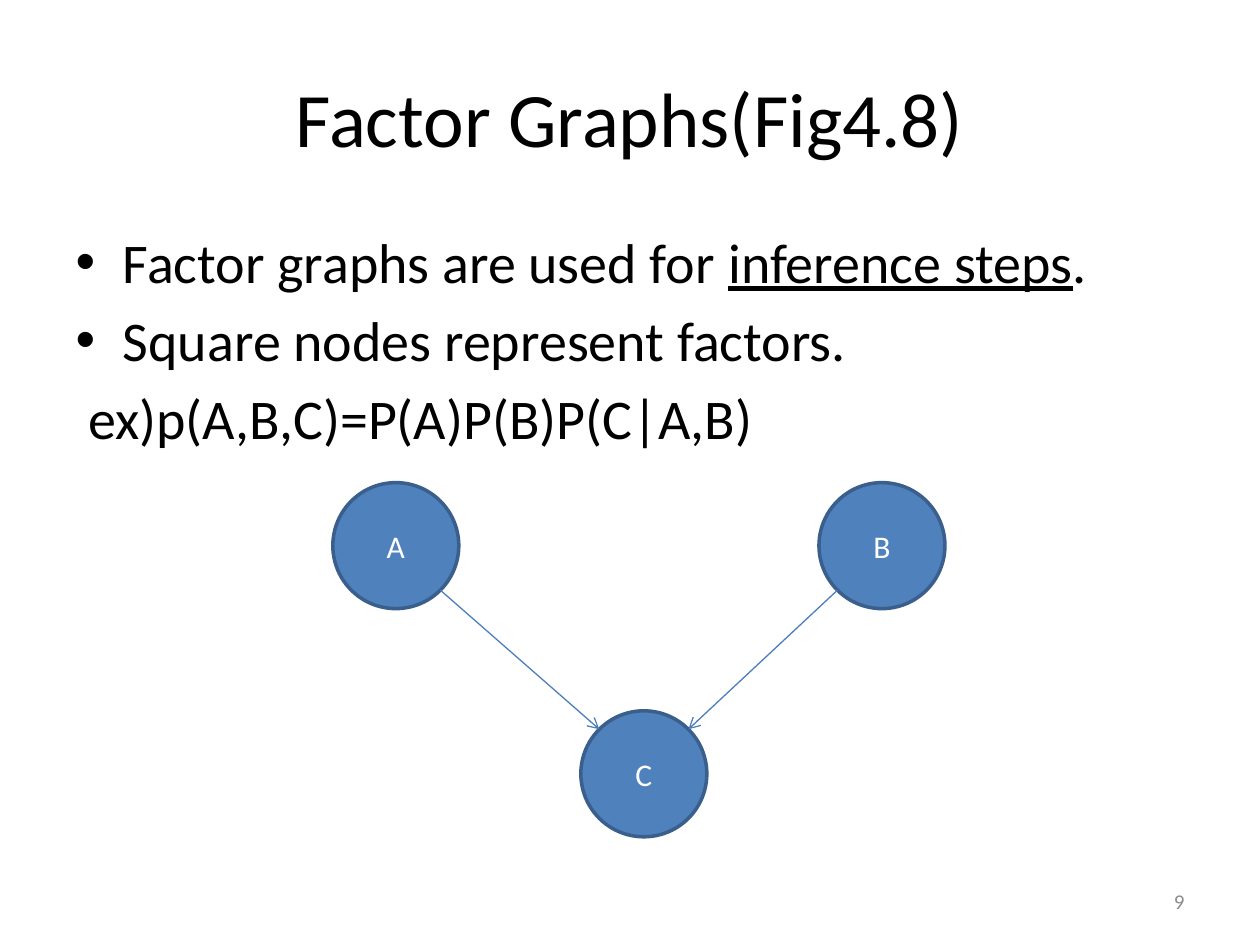
from dataclasses import dataclass
from math import sqrt

from lxml.etree import SubElement
from pptx import Presentation
from pptx.dml.color import RGBColor
from pptx.enum.shapes import MSO_CONNECTOR, MSO_SHAPE
from pptx.enum.text import MSO_ANCHOR, PP_ALIGN
from pptx.oxml.ns import qn
from pptx.util import Cm, Pt

BLACK = RGBColor(0x00, 0x00, 0x00)
WHITE = RGBColor(0xFF, 0xFF, 0xFF)
GRAY = RGBColor(0x8C, 0x8C, 0x8C)
NODE_FILL = RGBColor(0x4F, 0x81, 0xBD)
NODE_LINE = RGBColor(0x3A, 0x5F, 0x8C)
ARROW_LINE = RGBColor(0x4B, 0x7E, 0xBC)

DIAMETER = 2.54
DIAGONAL = DIAMETER / 2 / sqrt(2)

TITLE_FONT = {"name": "Calibri", "size": Pt(44)}
BODY_FONT = {"name": "Calibri", "size": Pt(32)}
NODE_FONT = {"name": "Calibri", "size": Pt(18)}
NUMBER_FONT = {"name": "Calibri", "size": Pt(12)}
UNDERLINED = {**BODY_FONT, "underline": True}


@dataclass(frozen=True)
class Node:
    label: str
    left: float
    top: float

    def rim_point(self, across: int, down: int) -> tuple[Cm, Cm]:
        center_x = self.left + DIAMETER / 2
        center_y = self.top + DIAMETER / 2
        return Cm(center_x + across * DIAGONAL), Cm(center_y + down * DIAGONAL)


@dataclass(frozen=True)
class Arrow:
    source: Node
    target: Node
    direction: int


NODE_A = Node("A", 6.71, 9.73)
NODE_B = Node("B", 16.51, 9.73)
NODE_C = Node("C", 11.71, 14.33)
NODES = [NODE_C, NODE_B, NODE_A]
ARROWS = [Arrow(NODE_A, NODE_C, 1), Arrow(NODE_B, NODE_C, -1)]

BODY_LINES = [
    [("Factor graphs are used for ", BODY_FONT), ("inference steps", UNDERLINED), (".", BODY_FONT)],
    [("Square nodes represent factors.", BODY_FONT)],
    [(" ex)p(A,B,C)=P(A)P(B)P(C|A,B)", BODY_FONT)],
]


def place(box, left: float, top: float, width: float, height: float) -> None:
    bounds = {"left": left, "top": top, "width": width, "height": height}
    for name, value in bounds.items():
        setattr(box, name, Cm(value))


def add_span(para, text: str, font_format: dict, color: RGBColor) -> None:
    span = para.add_run()
    span.text = text
    for name, value in font_format.items():
        setattr(span.font, name, value)
    span.font.color.rgb = color


def remove_bullet(para) -> None:
    properties = para._p.get_or_add_pPr()
    for name in ("marL", "indent"):
        properties.set(name, "0")
    SubElement(properties, qn("a:buNone"))


def fill_body(body) -> None:
    place(body, 1.27, 4.45, 22.86, 12.57)
    frame = body.text_frame
    for index, line in enumerate(BODY_LINES):
        para = frame.add_paragraph() if index else frame.paragraphs[0]
        for text, font_format in line:
            add_span(para, text, font_format, BLACK)
    remove_bullet(frame.paragraphs[-1])


def draw_node(page, node: Node) -> None:
    circle = page.shapes.add_shape(
        MSO_SHAPE.OVAL, Cm(node.left), Cm(node.top), Cm(DIAMETER), Cm(DIAMETER)
    )
    circle.shadow.inherit = False
    circle.fill.solid()
    circle.fill.fore_color.rgb = NODE_FILL
    circle.line.color.rgb = NODE_LINE
    circle.line.width = Pt(2)
    circle.text_frame.vertical_anchor = MSO_ANCHOR.MIDDLE
    para = circle.text_frame.paragraphs[0]
    para.alignment = PP_ALIGN.CENTER
    add_span(para, node.label, NODE_FONT, WHITE)


def draw_arrow(page, arrow: Arrow) -> None:
    start = arrow.source.rim_point(arrow.direction, 1)
    end = arrow.target.rim_point(-arrow.direction, -1)
    connector = page.shapes.add_connector(MSO_CONNECTOR.STRAIGHT, *start, *end)
    connector.line.color.rgb = ARROW_LINE
    connector.line.width = Pt(0.75)
    SubElement(connector.line._get_or_add_ln(), qn("a:tailEnd"), type="arrow")
    SubElement(connector._element.spPr, qn("a:effectLst"))


def draw_page_number(page, number: str) -> None:
    box = page.shapes.add_textbox(Cm(18.21), Cm(17.65), Cm(5.92), Cm(1.02))
    box.text_frame.word_wrap = True
    box.text_frame.vertical_anchor = MSO_ANCHOR.MIDDLE
    para = box.text_frame.paragraphs[0]
    para.alignment = PP_ALIGN.RIGHT
    add_span(para, number, NUMBER_FONT, GRAY)


def main() -> None:
    deck = Presentation()
    deck.slide_width, deck.slide_height = Cm(25.4), Cm(19.05)
    page = deck.slides.add_slide(deck.slide_layouts[1])

    title = page.shapes.title
    place(title, 1.27, 0.76, 22.86, 3.18)
    title.text_frame.vertical_anchor = MSO_ANCHOR.MIDDLE
    add_span(title.text_frame.paragraphs[0], "Factor Graphs(Fig4.8)", TITLE_FONT, BLACK)
    fill_body(page.placeholders[1])

    for node in NODES:
        draw_node(page, node)
    for arrow in ARROWS:
        draw_arrow(page, arrow)
    draw_page_number(page, "9")
    deck.save("out.pptx")


if __name__ == "__main__":
    main()
